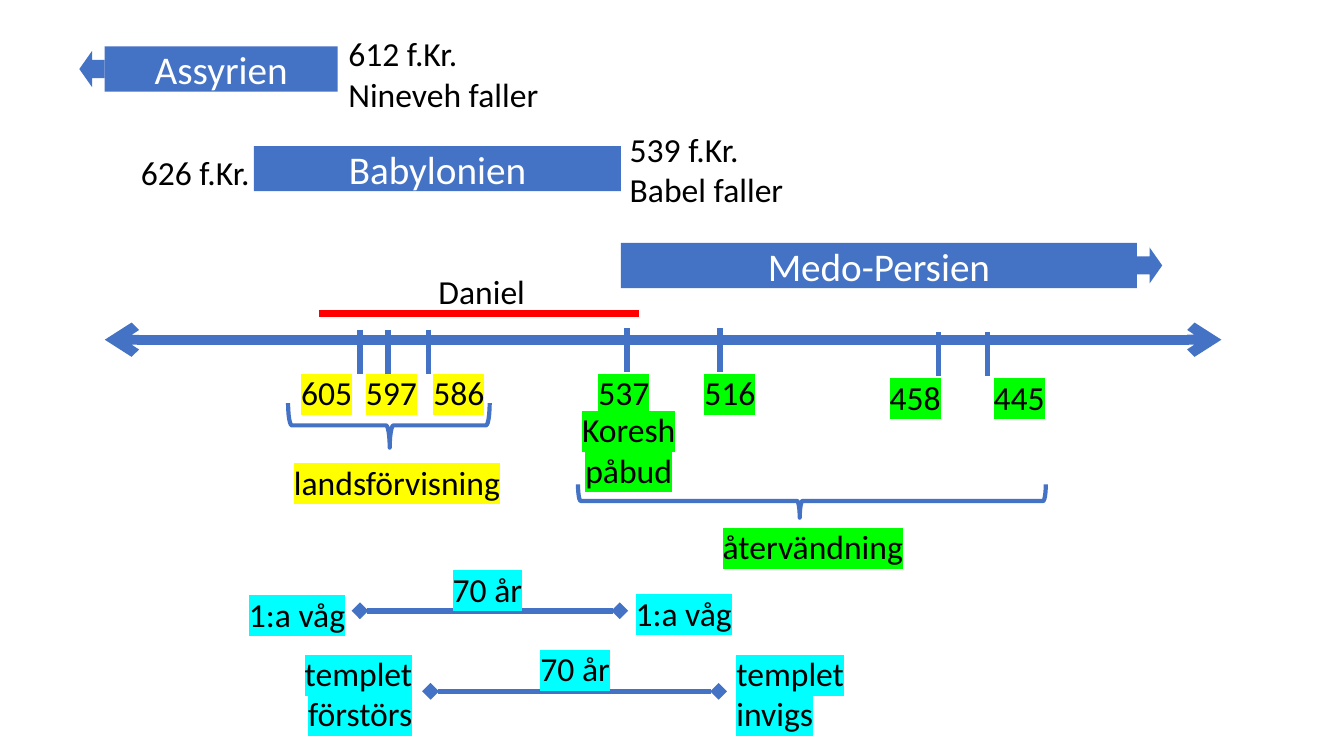
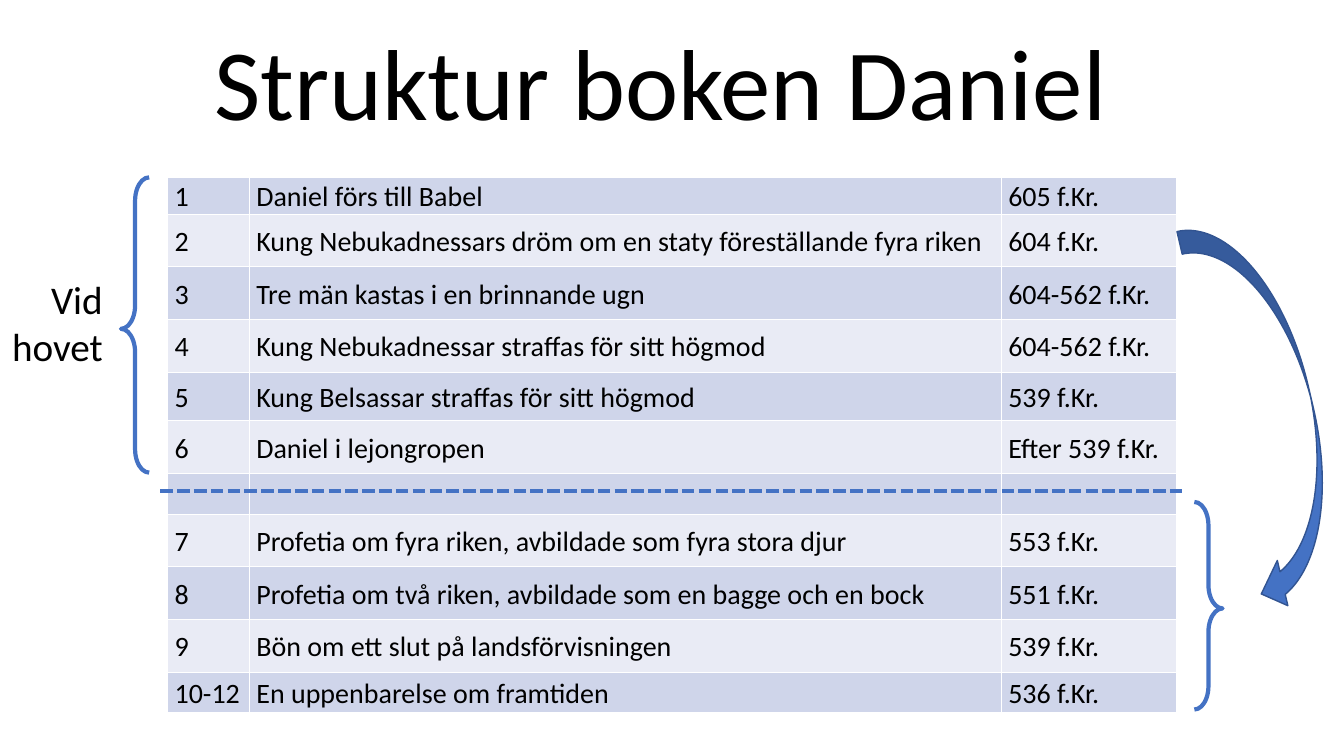
from dataclasses import dataclass
from typing import Optional

from pptx import Presentation
from pptx import util as u
from pptx.dml.color import RGBColor
from pptx.enum import dml, shapes, text
from pptx.oxml import ns
from pptx.oxml.xmlchemy import OxmlElement

# Shared style
FONT = "Calibri"
BLUE = RGBColor(0x44, 0x72, 0xC4)
DARK_BLUE = RGBColor(0x32, 0x54, 0x91)
RED = RGBColor(0xFF, 0x00, 0x00)
BLACK = RGBColor(0x00, 0x00, 0x00)
WHITE = RGBColor(0xFF, 0xFF, 0xFF)
YELLOW = RGBColor(0xFF, 0xFF, 0x00)
GREEN = RGBColor(0x00, 0xFF, 0x00)
CYAN = RGBColor(0x00, 0xFF, 0xFF)
BANDS = (RGBColor(0xCF, 0xD5, 0xEA), RGBColor(0xE9, 0xEB, 0xF5))
LEFT, CENTER, RIGHT = text.PP_ALIGN.LEFT, text.PP_ALIGN.CENTER, text.PP_ALIGN.RIGHT
KIND = shapes.MSO_SHAPE

# Shared measures in centimetres
ONE_LINE, TWO_LINES = 1.27, 2.31
BAR_HEIGHT = 1.14
TICK_LENGTH = 1.12


@dataclass
class Label:
    words: str
    left: float
    top: float
    width: float
    height: float = ONE_LINE
    mark: Optional[RGBColor] = None
    align: text.PP_ALIGN = LEFT
    wrap: bool = False
    size: int = 24


@dataclass
class Empire:
    name: str
    left: float
    top: float
    width: float
    arrow: Optional[KIND] = None


@dataclass
class Year:
    number: str
    tick_x: float
    tick_top: float
    left: float
    top: float
    mark: RGBColor


@dataclass
class Line:
    start: float
    end: float
    y: float
    weight: float
    color: RGBColor = BLUE
    ends: Optional[str] = None
    dash: Optional[dml.MSO_LINE] = None


@dataclass
class Brace:
    kind: KIND
    left: float
    top: float
    width: float
    height: float
    curve: float
    tip: float
    rotation: float = 0


@dataclass
class Chapter:
    number: str
    content: str
    date: str
    height: float


EMPIRES = [
    Empire("Assyrien", 2.64, 1.17, 5.87, KIND.LEFT_ARROW),
    Empire("Babylonien", 6.4, 3.68, 9.25),
    Empire("Medo-Persien", 15.65, 6.12, 13, KIND.RIGHT_ARROW),
]
YEARS = [
    Year("605", 9.07, 8.31, 7.34, 9.25, YELLOW),
    Year("597", 9.78, 8.31, 8.97, 9.25, YELLOW),
    Year("586", 10.8, 8.31, 10.67, 9.25, YELLOW),
    Year("537", 15.8, 8.26, 14.83, 9.25, GREEN),
    Year("516", 18.14, 8.26, 17.5, 9.25, GREEN),
    Year("458", 23.65, 8.36, 22.17, 9.37, GREEN),
    Year("445", 24.89, 8.36, 24.79, 9.37, GREEN),
]
TIMELINE_LINES = [
    Line(2.64, 30.78, 8.56, 7, ends="arrow"),
    Line(8.03, 16.1, 7.9, 5, RED),
    Line(9.07, 15.62, 15.39, 4, ends="diamond"),
    Line(10.85, 18.11, 17.42, 4, ends="diamond"),
]
TIMELINE_BRACES = [
    Brace(KIND.RIGHT_BRACE, 9.24, 8.18, 1.12, 5.08, 0.083, 0.496, 90),
    Brace(KIND.RIGHT_BRACE, 20.04, 6.73, 0.84, 11.79, 0.083, 0.526, 90),
]
TIMELINE_LABELS = [
    Label("612 f.Kr.\nNineveh faller", 8.53, 0.71, 5.36, TWO_LINES),
    Label("626 f.Kr.", 3.3, 3.71, 3.28),
    Label("539 f.Kr.\nBabel faller", 15.62, 3.12, 4.42, TWO_LINES),
    Label("Daniel", 10.8, 6.71, 2.72),
    Label("landsförvisning", 6.73, 11.51, 6.55, ONE_LINE, YELLOW, CENTER, True),
    Label("Koresh påbud", 13.28, 10.19, 5.13, TWO_LINES, GREEN, CENTER, True),
    Label("återvändning", 17.27, 13.13, 6.43, ONE_LINE, GREEN, CENTER, True),
    Label("70 år", 10.67, 14.2, 3.23, ONE_LINE, CYAN, CENTER, True),
    Label("1:a våg", 5.87, 14.83, 3.23, ONE_LINE, CYAN, CENTER, True),
    Label("1:a våg", 15.44, 14.81, 3.58, ONE_LINE, CYAN, CENTER, True),
    Label("70 år", 12.88, 16.21, 3.23, ONE_LINE, CYAN, CENTER, True),
    Label("templet förstörs", 6.5, 16.33, 4.14, TWO_LINES, CYAN, RIGHT, True),
    Label("templet invigs", 18.31, 16.33, 4.5, TWO_LINES, CYAN, LEFT, True),
]

CHAPTERS = [
    Chapter("1", "Daniel förs till Babel", "605 f.Kr.", 0.89),
    Chapter("2", "Kung Nebukadnessars dröm om en staty föreställande fyra riken",
            "604 f.Kr.", 1.33),
    Chapter("3", "Tre män kastas i en brinnande ugn", "604-562 f.Kr.", 1.33),
    Chapter("4", "Kung Nebukadnessar straffas för sitt högmod", "604-562 f.Kr.", 1.33),
    Chapter("5", "Kung Belsassar straffas för sitt högmod", "539 f.Kr.", 1.22),
    Chapter("6", "Daniel i lejongropen", "Efter 539 f.Kr.", 1.33),
    Chapter("", "", "", 1.02),
    Chapter("7", "Profetia om fyra riken, avbildade som fyra stora djur", "553 f.Kr.", 1.33),
    Chapter("8", "Profetia om två riken, avbildade som en bagge och en bock",
            "551 f.Kr.", 1.33),
    Chapter("9", "Bön om ett slut på landsförvisningen", "539 f.Kr.", 1.33),
    Chapter("10-12", "En uppenbarelse om framtiden", "536 f.Kr.", 1.02),
]
CHAPTER_COLUMNS = (2.06, 18.95, 4.42)
STRUCTURE_BRACES = [
    Brace(KIND.LEFT_BRACE, 3.05, 4.47, 0.71, 7.44, 0.833, 0.513),
    Brace(KIND.RIGHT_BRACE, 30.1, 12.65, 0.71, 5.23, 0.833, 0.513),
]
STRUCTURE_LABELS = [
    Label("Struktur boken Daniel", 5.16, 0.38, 23.24, 3.33, size=72),
    Label("Vid hovet", -0.28, 6.81, 3.12, 2.64, align=RIGHT, wrap=True, size=28),
]


# Drawing functions
def format_text(frame, size: int, color: RGBColor = BLACK,
                align: text.PP_ALIGN = LEFT, mark: Optional[RGBColor] = None) -> None:
    for paragraph in frame.paragraphs:
        paragraph.alignment = align
        for run in paragraph.runs:
            run.font.size = u.Pt(size)
            run.font.name = FONT
            run.font.color.rgb = color
            if mark is not None:
                highlight = OxmlElement("a:highlight")
                tone = OxmlElement("a:srgbClr")
                tone.set("val", str(mark))
                highlight.append(tone)
                run.font.fill  # the highlight follows the fill
                run._r.rPr.find(ns.qn("a:solidFill")).addnext(highlight)


def draw_label(slide, label: Label) -> None:
    box = slide.shapes.add_textbox(u.Cm(label.left), u.Cm(label.top),
                                   u.Cm(label.width), u.Cm(label.height))
    frame = box.text_frame
    frame.word_wrap = label.wrap
    frame.auto_size = text.MSO_AUTO_SIZE.SHAPE_TO_FIT_TEXT
    frame.text = label.words
    format_text(frame, label.size, align=label.align, mark=label.mark)


def draw_shape(slide, kind: KIND, left: float, top: float, width: float, height: float):
    shape = slide.shapes.add_shape(kind, u.Cm(left), u.Cm(top), u.Cm(width), u.Cm(height))
    shape.shadow.inherit = False
    shape.fill.solid()
    shape.fill.fore_color.rgb = BLUE
    shape.line.fill.background()
    return shape


def draw_empire(slide, empire: Empire) -> None:
    bar = draw_shape(slide, KIND.RECTANGLE, empire.left, empire.top, empire.width, BAR_HEIGHT)
    bar.text_frame.text = empire.name
    bar.text_frame.vertical_anchor = text.MSO_ANCHOR.MIDDLE
    format_text(bar.text_frame, 28, WHITE, CENTER)
    if empire.arrow is not None:
        width, height = 0.64, 0.91
        at_left = empire.arrow == KIND.LEFT_ARROW
        left = empire.left - width if at_left else empire.left + empire.width
        draw_shape(slide, empire.arrow, left, empire.top + (BAR_HEIGHT - height) / 2,
                   width, height)


def draw_brace(slide, brace: Brace) -> None:
    shape = draw_shape(slide, brace.kind, brace.left, brace.top, brace.width, brace.height)
    shape.fill.background()
    shape.line.color.rgb = BLUE
    shape.line.width = u.Pt(3)
    shape.adjustments[0] = brace.curve
    shape.adjustments[1] = brace.tip
    shape.rotation = brace.rotation


def connect(slide, x1: float, y1: float, x2: float, y2: float,
            weight: float, color: RGBColor = BLUE):
    connector = slide.shapes.add_connector(shapes.MSO_CONNECTOR.STRAIGHT, u.Cm(x1),
                                           u.Cm(y1), u.Cm(x2), u.Cm(y2))
    connector.line.color.rgb = color
    connector.line.width = u.Pt(weight)
    connector.element.spPr.append(OxmlElement("a:effectLst"))
    return connector


def draw_line(slide, line: Line) -> None:
    connector = connect(slide, line.start, line.y, line.end, line.y, line.weight, line.color)
    if line.dash is not None:
        connector.line.dash_style = line.dash
    if line.ends is not None:
        outline = connector.element.spPr.find(ns.qn("a:ln"))
        for tag in ("a:headEnd", "a:tailEnd"):
            end = OxmlElement(tag)
            end.set("type", line.ends)
            outline.append(end)


def draw_year(slide, year: Year) -> None:
    connect(slide, year.tick_x, year.tick_top, year.tick_x, year.tick_top + TICK_LENGTH, 4)
    draw_label(slide, Label(year.number, year.left, year.top, 1.8, mark=year.mark))


def draw_chapters(slide) -> None:
    table = slide.shapes.add_table(
        len(CHAPTERS), len(CHAPTER_COLUMNS), u.Cm(4.22), u.Cm(4.47),
        u.Cm(sum(CHAPTER_COLUMNS)), u.Cm(sum(c.height for c in CHAPTERS))).table
    table.first_row = False
    for column, width in zip(table.columns, CHAPTER_COLUMNS):
        column.width = u.Cm(width)
    for index, (row, chapter) in enumerate(zip(table.rows, CHAPTERS)):
        row.height = u.Cm(chapter.height)
        for cell, words in zip(row.cells, (chapter.number, chapter.content, chapter.date)):
            cell.fill.solid()
            cell.fill.fore_color.rgb = BANDS[index % 2]
            cell.vertical_anchor = text.MSO_ANCHOR.MIDDLE
            cell.margin_left = cell.margin_right = u.Cm(0.18)
            cell.margin_top = cell.margin_bottom = 0
            cell.text_frame.text = words
            cell.text_frame.paragraphs[0].line_spacing = 1.07
            format_text(cell.text_frame, 20)


# Slides
def build_timeline(slide) -> None:
    for empire in EMPIRES:
        draw_empire(slide, empire)
    for line in TIMELINE_LINES:
        draw_line(slide, line)
    for year in YEARS:
        draw_year(slide, year)
    for brace in TIMELINE_BRACES:
        draw_brace(slide, brace)
    for label in TIMELINE_LABELS:
        draw_label(slide, label)


def build_structure(slide) -> None:
    draw_chapters(slide)
    for brace in STRUCTURE_BRACES:
        draw_brace(slide, brace)
    draw_line(slide, Line(4.04, 29.82, 12.37, 3, dash=dml.MSO_LINE.SQUARE_DOT))
    for label in STRUCTURE_LABELS:
        draw_label(slide, label)
    # Arrow from the dream in chapter 2 to the visions
    arrow = draw_shape(slide, KIND.CURVED_LEFT_ARROW, 30.76, 5.44, 2.34, 9.96)
    arrow.line.color.rgb = DARK_BLUE
    arrow.line.width = u.Pt(1)
    arrow.rotation = 346.9


def main() -> None:
    deck = Presentation()
    deck.slide_width, deck.slide_height = u.Cm(33.87), u.Cm(19.05)
    for build in (build_timeline, build_structure):
        build(deck.slides.add_slide(deck.slide_layouts[6]))
    deck.save("out.pptx")


if __name__ == "__main__":
    main()
